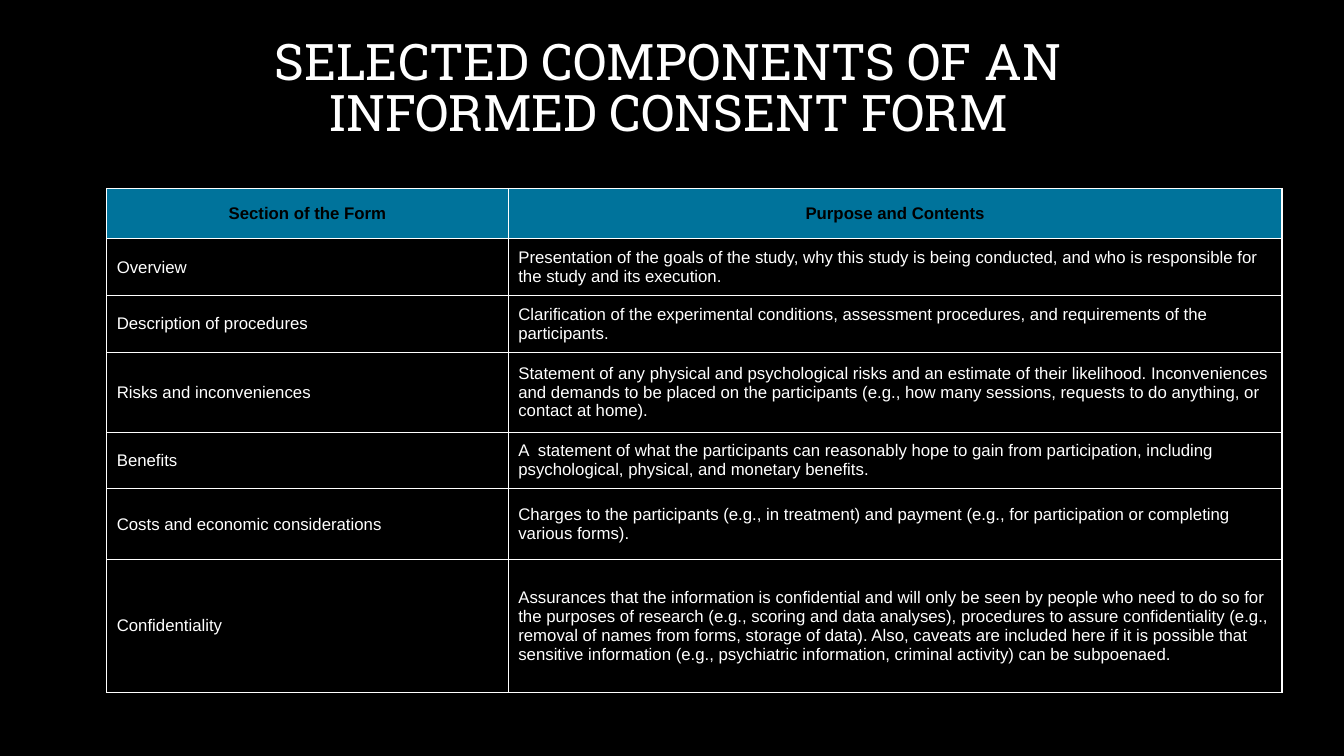
from dataclasses import dataclass

from pptx import Presentation
from pptx.dml.color import RGBColor
from pptx.enum.text import MSO_ANCHOR, PP_ALIGN
from pptx.oxml import parse_xml
from pptx.oxml.ns import nsdecls
from pptx.util import Cm, Pt

# Content
TITLE = "SELECTED COMPONENTS OF AN INFORMED CONSENT FORM"
HEAD = ("Section of the Form", "Purpose and Contents")
# Row height in cm, section, purpose
ROWS = [
    (1.43, "Overview",
     "Presentation of the goals of the study, why this study is being conducted, "
     "and who is responsible for the study and its execution."),
    (1.43, "Description of procedures",
     "Clarification of the experimental conditions, assessment procedures, "
     "and requirements of the participants."),
    (2.01, "Risks and inconveniences",
     "Statement of any physical and psychological risks and an estimate of their "
     "likelihood. Inconveniences and demands to be placed on the participants "
     "(e.g., how many sessions, requests to do anything, or contact at home)."),
    (1.43, "Benefits",
     "A  statement of what the participants can reasonably hope to gain from "
     "participation, including psychological, physical, and monetary benefits."),
    (1.78, "Costs and economic considerations",
     "Charges to the participants (e.g., in treatment) and payment "
     "(e.g., for participation or completing various forms)."),
    (3.35, "Confidentiality",
     "Assurances that the information is confidential and will only be seen by "
     "people who need to do so for the purposes of research (e.g., scoring and data "
     "analyses), procedures to assure confidentiality (e.g., removal of names from "
     "forms, storage of data). Also, caveats are included here if it is possible that "
     "sensitive information (e.g., psychiatric information, criminal activity) can be "
     "subpoenaed."),
]
GRID = [(1.27, *HEAD)] + ROWS
COLS = (10.12, 19.5)


@dataclass(frozen=True)
class Theme:
    black: RGBColor = RGBColor(0, 0, 0)
    white: RGBColor = RGBColor(255, 255, 255)
    teal: RGBColor = RGBColor(0x00, 0x73, 0x9B)
    title: str = "Roboto Slab"
    body: str = "Arial"
    big: int = 36
    small: int = 12
    line: int = 1


THEME = Theme()


def style(para, name, size, color, bold=False):
    font = para.font
    font.name, font.size, font.bold = name, Pt(size), bold
    font.color.rgb = color


def border(cell):
    """Draw all four edges, placed ahead of the cell fill."""
    props = cell._tc.get_or_add_tcPr()
    for i, edge in enumerate(("lnL", "lnR", "lnT", "lnB")):
        props.insert(i, parse_xml(
            f'<a:{edge} {nsdecls("a")} w="{Pt(THEME.line)}"><a:solidFill>'
            f'<a:srgbClr val="{THEME.white}"/></a:solidFill></a:{edge}>'))


def add_title(slide):
    box = slide.shapes.add_textbox(Cm(4.57), Cm(0.51), Cm(24.54), Cm(3.56))
    frame = box.text_frame
    frame.word_wrap = True
    frame.vertical_anchor = MSO_ANCHOR.MIDDLE
    para = frame.paragraphs[0]
    para.text = TITLE
    para.alignment = PP_ALIGN.CENTER
    para.line_spacing = 0.83
    style(para, THEME.title, THEME.big, THEME.white)


def add_grid(slide):
    high = sum(row[0] for row in GRID)
    table = slide.shapes.add_table(
        len(GRID), len(COLS), Cm(2.69), Cm(4.75), Cm(sum(COLS)), Cm(high)).table
    table.first_row = True
    table.horz_banding = False
    for col, wide in zip(table.columns, COLS):
        col.width = Cm(wide)
    for r, (tall, *texts) in enumerate(GRID):
        table.rows[r].height = Cm(tall)
        top = r == 0
        for c, text in enumerate(texts):
            cell = table.cell(r, c)
            cell.text = text
            cell.vertical_anchor = MSO_ANCHOR.MIDDLE
            para = cell.text_frame.paragraphs[0]
            para.alignment = PP_ALIGN.CENTER if top else PP_ALIGN.LEFT
            style(para, THEME.body, THEME.small,
                  THEME.black if top else THEME.white, top)
            if top:
                cell.fill.solid()
                cell.fill.fore_color.rgb = THEME.teal
            else:
                cell.fill.background()
            border(cell)


def main():
    deck = Presentation()
    deck.slide_width, deck.slide_height = Cm(33.87), Cm(19.05)
    slide = deck.slides.add_slide(deck.slide_layouts[6])
    # Backdrop
    fill = slide.background.fill
    fill.solid()
    fill.fore_color.rgb = THEME.black
    # Title and table
    add_title(slide)
    add_grid(slide)
    deck.save("out.pptx")


if __name__ == "__main__":
    main()
